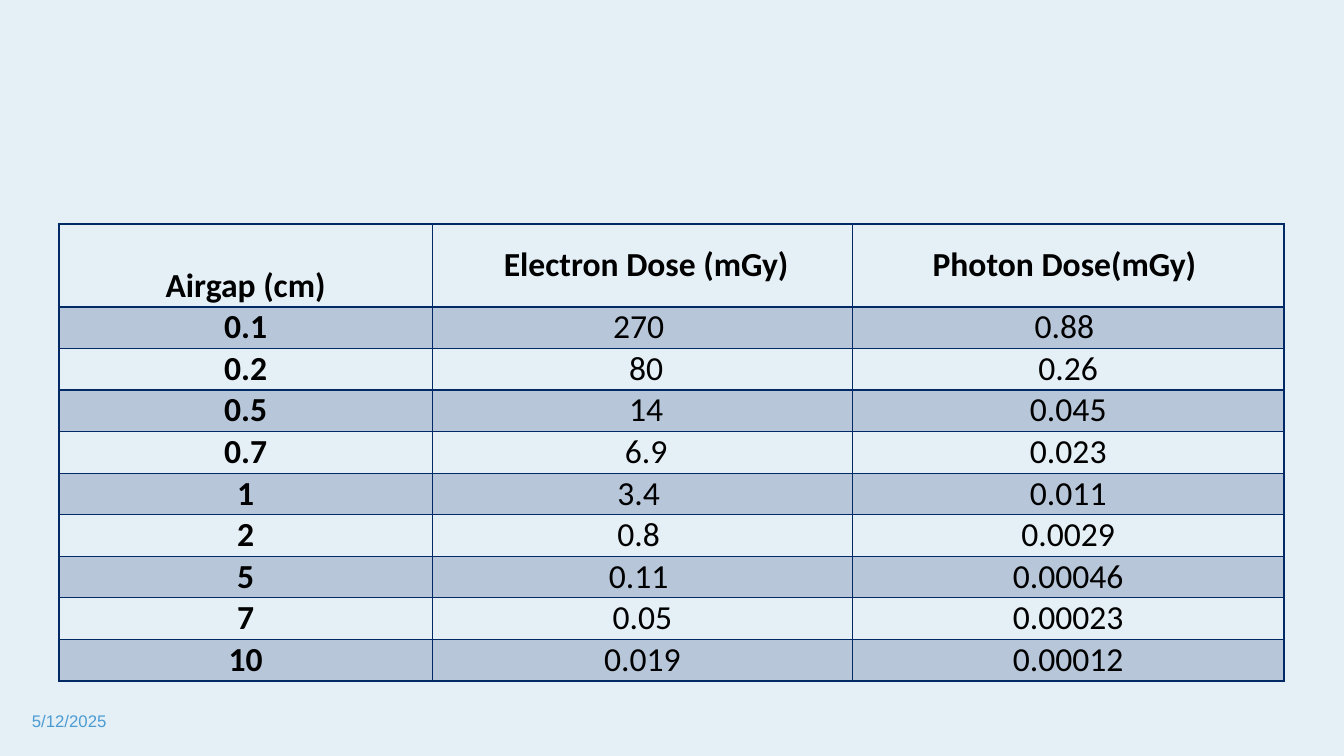
from dataclasses import dataclass

from lxml.etree import SubElement
from pptx import Presentation
from pptx.dml.color import RGBColor
from pptx.enum.text import MSO_ANCHOR, PP_ALIGN
from pptx.oxml.ns import qn
from pptx.util import Pt


@dataclass(frozen=True)
class Theme:
    background: str = "E5EFF6"
    navy: str = "002966"
    text: str = "000000"
    date: str = "4B9CD3"
    table_font: str = "Calibri"
    date_font: str = "Arial"
    table_size: int = 24
    date_size: int = 12
    band_alpha: int = 20
    thin: int = 1
    thick: int = 2


THEME = Theme()
EMU_PER_INCH = 914400
PX_PER_INCH = 100.8

HEADER = ["Airgap (cm)", " Electron Dose (mGy)", "Photon Dose(mGy) "]
DOSES = [
    ["0.1", "270 ", "0.88 "],
    ["0.2", " 80", "0.26"],
    ["0.5", " 14", "0.045"],
    ["0.7", " 6.9", "0.023"],
    ["1", "3.4 ", "0.011"],
    ["2", "0.8 ", "0.0029"],
    ["5", "0.11 ", "0.00046"],
    ["7", "0.05", "0.00023"],
    ["10", "0.019", "0.00012"],
]
COLUMN_WIDTHS = [373, 420, 431]
HEADER_HEIGHT = 83


def px(n):
    return round(n * EMU_PER_INCH / PX_PER_INCH)


def style_paragraph(p, font, size, color, bold=False):
    p.font.name = font
    p.font.size = Pt(size)
    p.font.bold = bold
    p.font.color.rgb = RGBColor.from_string(color)


def set_borders(cell, top, bottom):
    tc_pr = cell._tc.get_or_add_tcPr()
    widths = {"lnL": THEME.thin, "lnR": THEME.thin, "lnT": top, "lnB": bottom}
    for side, width in widths.items():
        ln = SubElement(tc_pr, qn(f"a:{side}"), w=str(Pt(width)))
        fill = SubElement(ln, qn("a:solidFill"))
        SubElement(fill, qn("a:srgbClr"), val=THEME.navy)


def fill_cell(cell, banded):
    if not banded:
        cell.fill.background()
        return
    cell.fill.solid()
    cell.fill.fore_color.rgb = RGBColor.from_string(THEME.navy)
    color = cell._tc.tcPr.find(f"{qn('a:solidFill')}/{qn('a:srgbClr')}")
    SubElement(color, qn("a:alpha"), val=str(THEME.band_alpha * 1000))


def write_cell(cell, text, row, col):
    cell.margin_left = cell.margin_right = px(7)
    cell.margin_top = cell.margin_bottom = 0
    cell.vertical_anchor = MSO_ANCHOR.TOP
    if row == 0:
        cell.vertical_anchor = MSO_ANCHOR.BOTTOM if col == 0 else MSO_ANCHOR.MIDDLE
    set_borders(
        cell,
        top=THEME.thick if row == 1 else THEME.thin,
        bottom=THEME.thick if row == 0 else THEME.thin,
    )
    fill_cell(cell, banded=row % 2 == 1)
    p = cell.text_frame.paragraphs[0]
    p.text = text
    p.alignment = PP_ALIGN.CENTER
    style_paragraph(p, THEME.table_font, THEME.table_size, THEME.text,
                    bold=row == 0 or col == 0)


def add_dose_table(s, x, y, w, h):
    rows = [HEADER, *DOSES]
    table = s.shapes.add_table(len(rows), len(HEADER), px(x), px(y), px(w), px(h)).table
    table.horz_banding = False
    for column, width in zip(table.columns, COLUMN_WIDTHS):
        column.width = px(w * width / sum(COLUMN_WIDTHS))
    for i, values in enumerate(rows):
        body_height = (h - HEADER_HEIGHT) / len(DOSES)
        table.rows[i].height = px(body_height if i else HEADER_HEIGHT)
        for j, text in enumerate(values):
            write_cell(table.cell(i, j), text, i, j)


def add_date(s, x, y, w, h):
    tf = s.shapes.add_textbox(px(x), px(y), px(w), px(h)).text_frame
    tf.word_wrap = True
    tf.vertical_anchor = MSO_ANCHOR.MIDDLE
    p = tf.paragraphs[0]
    p.text = "5/12/2025"
    style_paragraph(p, THEME.date_font, THEME.date_size, THEME.date)


def main():
    prs = Presentation()
    prs.slide_width, prs.slide_height = px(1344), px(756)
    s = prs.slides.add_slide(prs.slide_layouts[6])
    s.background.fill.solid()
    s.background.fill.fore_color.rgb = RGBColor.from_string(THEME.background)
    add_dose_table(s, 59, 224, 1225, 457)
    add_date(s, 22, 701, 302, 40)
    prs.save("out.pptx")


if __name__ == "__main__":
    main()
